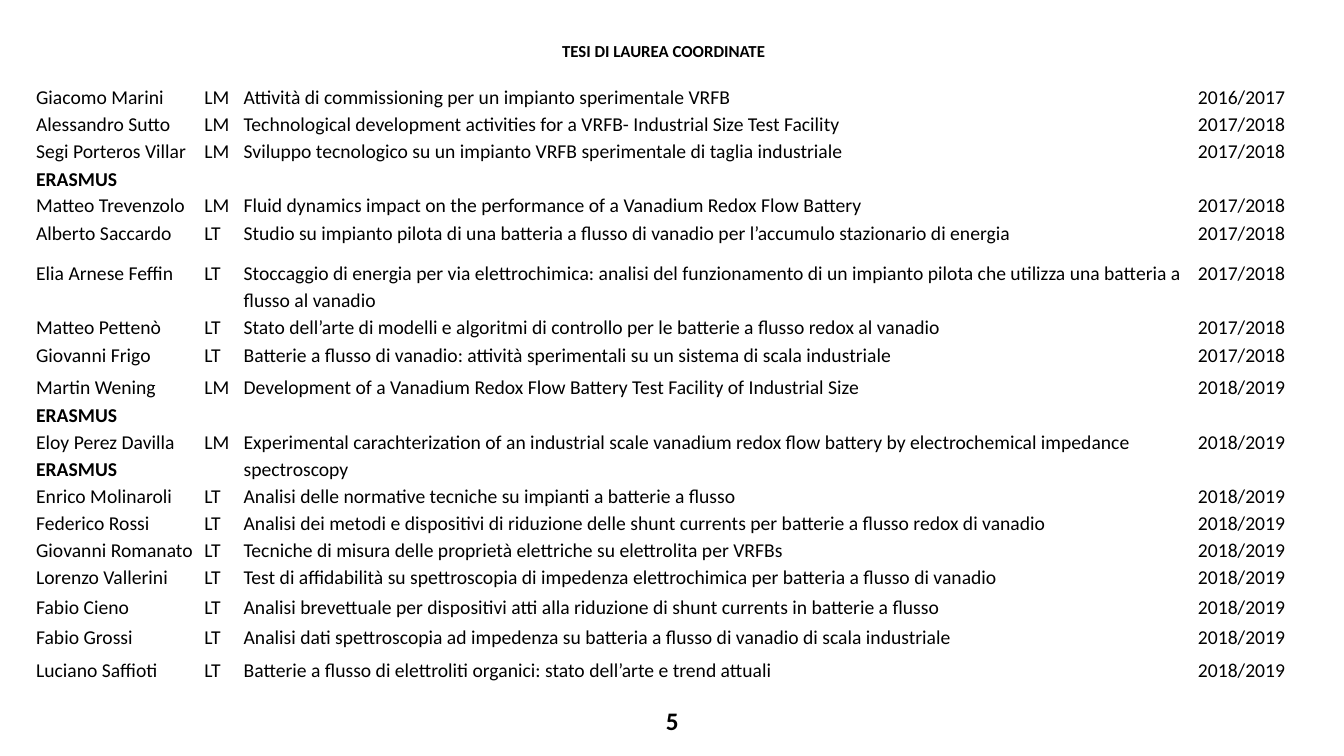
import pptx
import pptx.dml.color
import pptx.enum.text
import pptx.util

Cm = pptx.util.Cm
FONT = "Calibri"
BLACK = "000000"
COLUMN_WIDTHS = [4.24, 0.99, 24.05, 2.97]
# Name, optional mark, degree, thesis title, academic year, row height in cm
THESES = [
    ("Giacomo Marini", "", "LM", "Attività di commissioning per un impianto sperimentale VRFB", "2016/2017", 0.15),
    ("Alessandro Sutto", "", "LM", "Technological development activities for a VRFB- Industrial Size Test Facility",
     "2017/2018", 0.66),
    ("Segi Porteros Villar", "ERASMUS", "LM",
     "Sviluppo tecnologico su un impianto VRFB sperimentale di taglia industriale", "2017/2018", 0.66),
    ("Matteo Trevenzolo", "", "LM", "Fluid dynamics impact on the performance of a Vanadium Redox Flow Battery",
     "2017/2018", 0.66),
    ("Alberto Saccardo", "", "LT",
     "Studio su impianto pilota di una batteria a flusso di vanadio per l’accumulo stazionario di energia",
     "2017/2018", 1.02),
    ("Elia Arnese Feffin", "", "LT",
     "Stoccaggio di energia per via elettrochimica: analisi del funzionamento di un impianto pilota "
     "che utilizza una batteria a flusso al vanadio", "2017/2018", 1.35),
    ("Matteo Pettenò", "", "LT",
     "Stato dell’arte di modelli e algoritmi di controllo per le batterie a flusso redox al vanadio",
     "2017/2018", 0.71),
    ("Giovanni Frigo", "", "LT",
     "Batterie a flusso di vanadio: attività sperimentali su un sistema di scala industriale", "2017/2018", 0.81),
    ("Martin Wening", "ERASMUS", "LM",
     "Development of a Vanadium Redox Flow Battery Test Facility of Industrial Size", "2018/2019", 0.66),
    ("Eloy Perez Davilla", "ERASMUS", "LM",
     "Experimental carachterization of an industrial scale vanadium redox flow battery "
     "by electrochemical impedance spectroscopy", "2018/2019", 1.02),
    ("Enrico Molinaroli", "", "LT", "Analisi delle normative tecniche su impianti a batterie a flusso",
     "2018/2019", 0.66),
    ("Federico Rossi", "", "LT",
     "Analisi dei metodi e dispositivi di riduzione delle shunt currents per batterie a flusso redox di vanadio",
     "2018/2019", 0.69),
    ("Giovanni Romanato", "", "LT", "Tecniche di misura delle proprietà elettriche su elettrolita per VRFBs",
     "2018/2019", 0.66),
    ("Lorenzo Vallerini", "", "LT",
     "Test di affidabilità su spettroscopia di impedenza elettrochimica per batteria a flusso di vanadio",
     "2018/2019", 0.76),
    ("Fabio Cieno", "", "LT",
     "Analisi brevettuale per dispositivi atti alla riduzione di shunt currents in batterie a flusso",
     "2018/2019", 0.74),
    ("Fabio Grossi", "", "LT",
     "Analisi dati spettroscopia ad impedenza su batteria a flusso di vanadio di scala industriale",
     "2018/2019", 0.84),
    ("Luciano Saffioti", "", "LT", "Batterie a flusso di elettroliti organici: stato dell’arte e trend attuali",
     "2018/2019", 0.66),
]


def color(code):
    return pptx.dml.color.RGBColor.from_string(code)


def write(para, text, size=14, bold=False, align=None, spacing=None):
    para.alignment = align
    para.line_spacing = spacing
    span = para.add_run()
    span.text = text
    span.font.name = FONT
    span.font.size = pptx.util.Pt(size)
    span.font.bold = bold
    span.font.color.rgb = color(BLACK)


deck = pptx.Presentation()
deck.slide_width = Cm(33.87)
deck.slide_height = Cm(19.05)
page = deck.slides.add_slide(deck.slide_layouts[6])

anchors = pptx.enum.text.MSO_ANCHOR
for text, size, anchor, left, top, width, height in [
    ("5", 18, anchors.MIDDLE, 13.13, 17.65, 7.62, 1.02),
    ("TESI DI LAUREA COORDINATE", 12, anchors.TOP, 0.81, 0.91, 31.83, 1.8),
]:
    box = page.shapes.add_textbox(Cm(left), Cm(top), Cm(width), Cm(height))
    box.text_frame.word_wrap = True
    box.text_frame.vertical_anchor = anchor
    write(box.text_frame.paragraphs[0], text, size=size, bold=True, align=pptx.enum.text.PP_ALIGN.CENTER)

frame = page.shapes.add_table(len(THESES), len(COLUMN_WIDTHS), Cm(0.81), Cm(2.08),
                              Cm(sum(COLUMN_WIDTHS)), Cm(14.91))
table = frame.table
table.last_row = True
for column, width in zip(table.columns, COLUMN_WIDTHS):
    column.width = Cm(width)

for row, (name, mark, degree, title, year, height) in zip(table.rows, THESES):
    row.height = Cm(height)
    for cell, text in zip(row.cells, (name, degree, title, year)):
        cell.fill.background()
        cell.margin_left = cell.margin_right = Cm(0.1)
        cell.margin_top = cell.margin_bottom = 0
        write(cell.text_frame.paragraphs[0], text, spacing=1.15)
    if mark:
        write(row.cells[0].text_frame.add_paragraph(), mark, bold=True, spacing=1.15)

deck.save("out.pptx")
